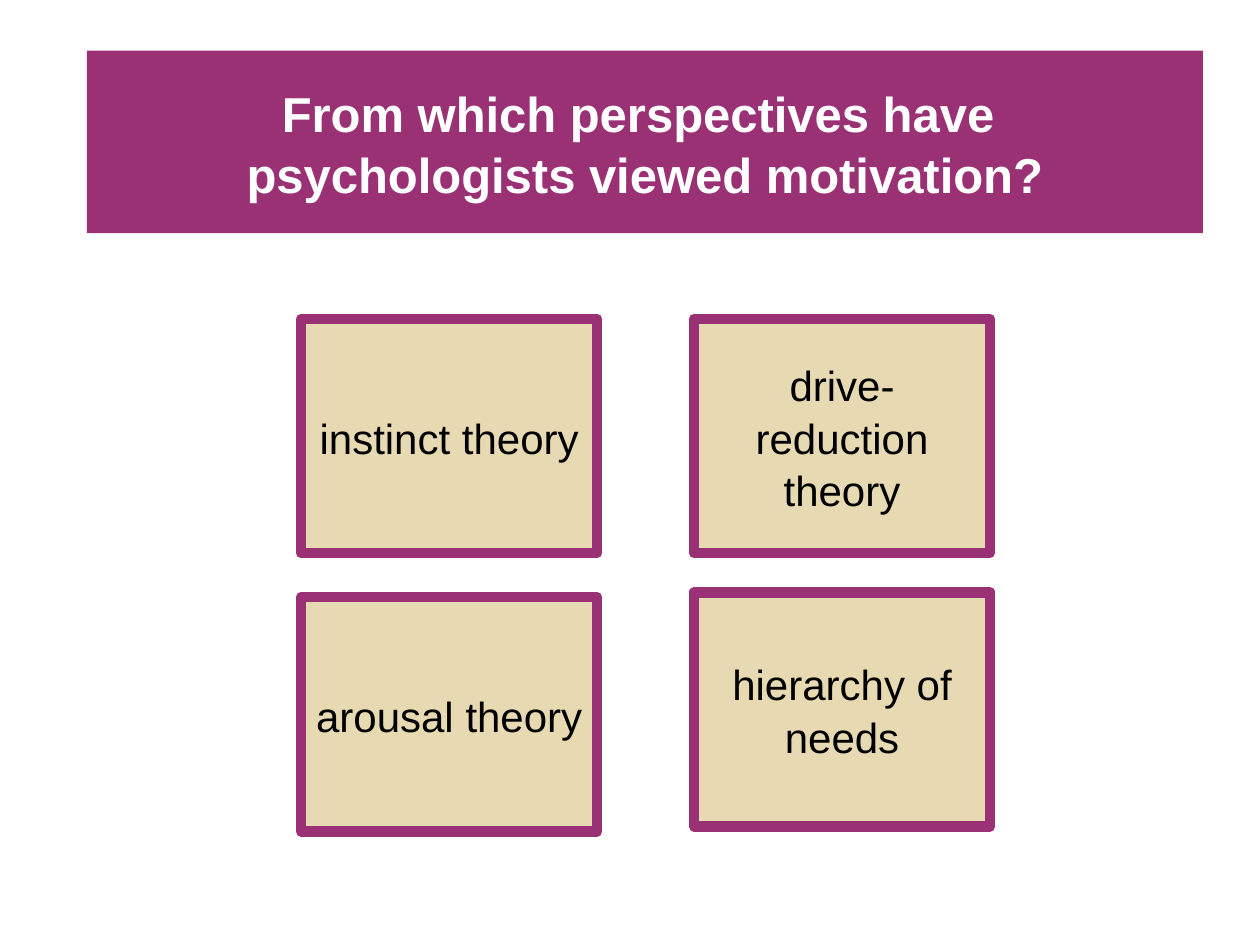
from pptx import Presentation
from pptx import util as u
from pptx.dml.color import RGBColor
from pptx.enum import shapes, text

PLUM, SAND, BLACK, WHITE = "9B3175", "E7D9B1", "000000", "FFFFFF"

TITLE = "From which perspectives have \vpsychologists viewed motivation?"
THEORIES = [
    ("instinct theory", 0, 6.43),
    ("drive-reduction theory", 1, 6.43),
    ("arousal theory", 0, 12.04),
    ("hierarchy of needs", 1, 11.94),
]
BOX_LEFT, COLUMN_STEP = 6.07, 7.92
BOX_WIDTH, BOX_HEIGHT = 5.97, 4.72

TITLE_FONT = {"name": "Arial", "size": u.Pt(28), "bold": True}
BOX_FONT = {"name": "Arial", "size": u.Pt(24), "bold": False}
FRAME = {
    "word_wrap": True,
    "auto_size": text.MSO_AUTO_SIZE.NONE,
    "vertical_anchor": text.MSO_ANCHOR.MIDDLE,
}
PARAGRAPH = {"alignment": text.PP_ALIGN.CENTER, "line_spacing": 1.05}


def apply(target, values):
    for name, value in values.items():
        setattr(target, name, value)


def paint(color_format, color):
    color_format.rgb = RGBColor.from_string(color)


def place(shape, left, top, width, height):
    apply(shape, {"left": u.Cm(left), "top": u.Cm(top),
                  "width": u.Cm(width), "height": u.Cm(height)})


def fill(shape, color):
    shape.fill.solid()
    paint(shape.fill.fore_color, color)


def write(shape, content, font, color):
    frame = shape.text_frame
    frame.text = content
    apply(frame, FRAME)
    paragraph = frame.paragraphs[0]
    apply(paragraph, PARAGRAPH)
    for run in paragraph.runs:
        apply(run.font, font)
        paint(run.font.color, color)


def add_theory(slide, name, column, top):
    box = slide.shapes.add_shape(shapes.MSO_SHAPE.RECTANGLE, 0, 0, 0, 0)
    place(box, BOX_LEFT + column * COLUMN_STEP, top, BOX_WIDTH, BOX_HEIGHT)
    box.shadow.inherit = False
    fill(box, SAND)
    paint(box.line.color, PLUM)
    box.line.width = u.Pt(6)
    write(box, name, BOX_FONT, BLACK)


def main():
    presentation = Presentation()
    apply(presentation, {"slide_width": u.Cm(25.4), "slide_height": u.Cm(19.05)})
    slide = presentation.slides.add_slide(presentation.slide_layouts[5])
    title = slide.shapes.title
    place(title, 1.75, 1.02, 22.5, 3.68)
    fill(title, PLUM)
    write(title, TITLE, TITLE_FONT, WHITE)
    for theory in THEORIES:
        add_theory(slide, *theory)
    presentation.save("out.pptx")


if __name__ == "__main__":
    main()
